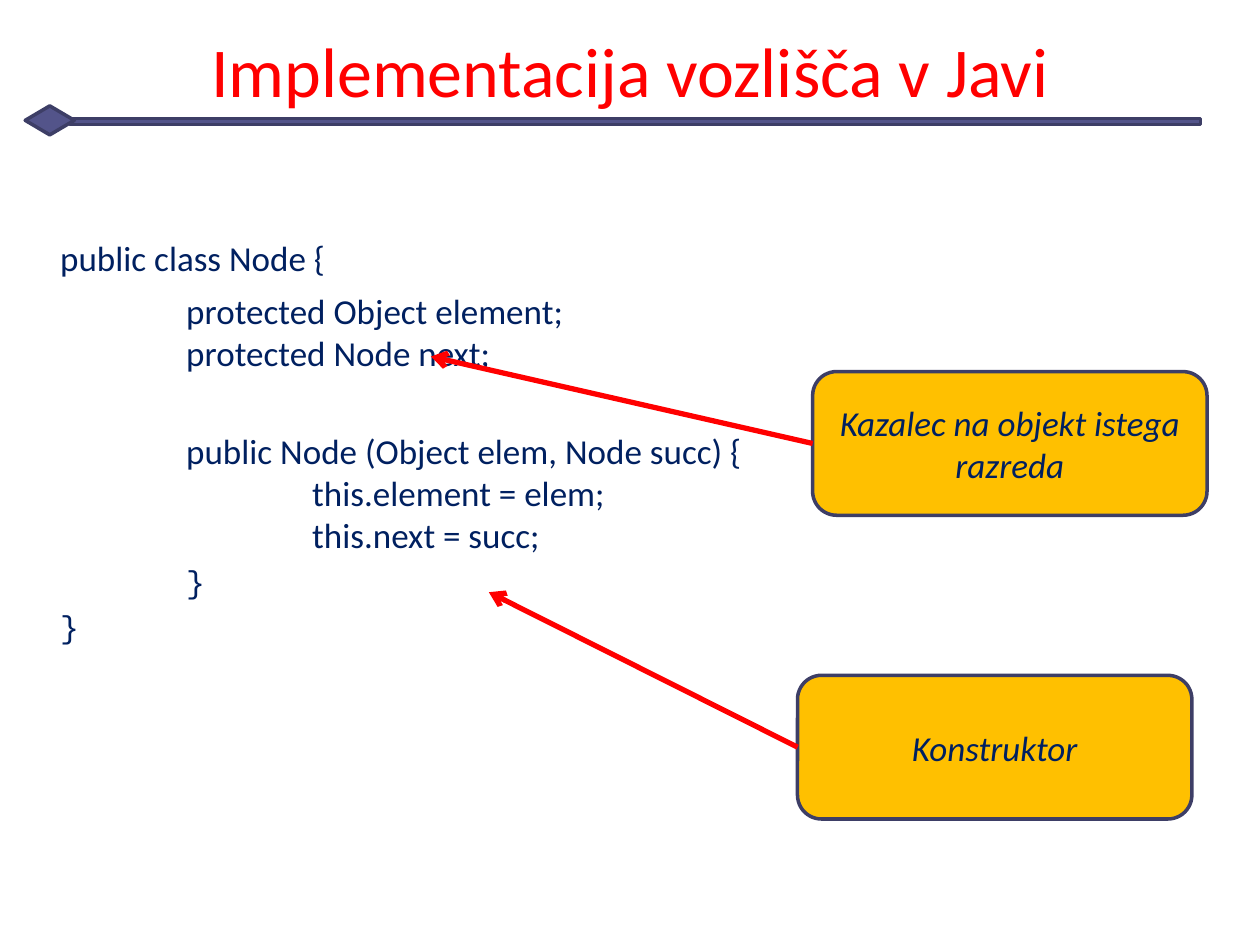
from lxml import etree
from pptx import Presentation
from pptx.dml.color import RGBColor
from pptx.enum.shapes import MSO_CONNECTOR, MSO_SHAPE
from pptx.enum.text import MSO_ANCHOR, PP_ALIGN
from pptx.oxml.ns import qn
from pptx.util import Inches, Pt

RECTANGLE = MSO_SHAPE.RECTANGLE
DIAMOND = MSO_SHAPE.FLOWCHART_DECISION
ROUNDED = MSO_SHAPE.ROUNDED_RECTANGLE
STRAIGHT = MSO_CONNECTOR.STRAIGHT
MIDDLE = MSO_ANCHOR.MIDDLE
CENTER = PP_ALIGN.CENTER

RED = RGBColor(0xFF, 0x00, 0x00)
NAVY = RGBColor(0x00, 0x20, 0x60)
VIOLET = RGBColor(0x53, 0x54, 0x8A)
DARK_VIOLET = RGBColor(0x3D, 0x3E, 0x66)
AMBER = RGBColor(0xFF, 0xC0, 0x00)

deck = Presentation()
deck.slide_width, deck.slide_height = Inches(10), Inches(7.5)
slide = deck.slides.add_slide(deck.slide_layouts[6])

# Positions are percentages of the slide's width and height
COL = deck.slide_width / 100
ROW = deck.slide_height / 100


def add_panel(kind, left, top, width, height, fill):
    panel = slide.shapes.add_shape(kind, int(left * COL), int(top * ROW),
                                   int(width * COL), int(height * ROW))
    panel.shadow.inherit = False
    panel.fill.solid()
    panel.fill.fore_color.rgb = fill
    panel.line.color.rgb = DARK_VIOLET
    panel.line.width = Pt(2)
    return panel


def add_text(paragraph, text, size, color, font="Calibri", italic=None):
    run = paragraph.add_run()
    run.text = text
    run.font.size = Pt(size)
    run.font.name = font
    run.font.color.rgb = color
    run.font.italic = italic


# Rule with a diamond under the title
add_panel(RECTANGLE, 5.5, 12.53, 89.8, 0.67, VIOLET)
add_panel(DIAMOND, 2, 11.2, 3.9, 3.07, VIOLET)

# Title
title = slide.shapes.add_textbox(int(5 * COL), int(2.13 * ROW),
                                 int(90 * COL), int(10.4 * ROW)).text_frame
title.word_wrap = True
title.vertical_anchor = MIDDLE
title.paragraphs[0].alignment = CENTER
add_text(title.paragraphs[0], "Implementacija vozlišča v Javi", 40, RED)

# Java listing: indent level, space before, code, size, font
code_lines = [
    (0, 0, "public class Node {", 20, "Calibri"),
    (1, 6, "protected Object element;", 20, "Calibri"),
    (1, 0, "protected Node next;", 20, "Calibri"),
    (1, 32, "public Node (Object elem, Node succ) {", 20, "Calibri"),
    (2, 0, "this.element = elem;", 20, "Calibri"),
    (2, 0, "this.next = succ;", 20, "Calibri"),
    (1, 4, "}", 18, "Courier New"),
    (0, 4, "}", 18, "Courier New"),
]
BASE_INDENT, LEVEL_INDENT = 3.8, 10
listing = slide.shapes.add_textbox(0, int(22.27 * ROW),
                                   int(85 * COL), int(67.73 * ROW)).text_frame
listing.word_wrap = True
listing.margin_top = int(2.8 * ROW)
for number, (level, gap, code, size, font) in enumerate(code_lines):
    line = listing.add_paragraph() if number else listing.paragraphs[0]
    indent = int((BASE_INDENT + level * LEVEL_INDENT) * COL)
    line._p.get_or_add_pPr().set("marL", str(indent))
    line.space_before = Pt(gap)
    add_text(line, code, size, NAVY, font)

# Callouts, each with an arrow from its left side to the code
CALLOUT_WIDTH, CALLOUT_HEIGHT = 31.3, 15.2
callouts = [
    ("Kazalec na objekt istega razreda", 64.5, 39.33, 34.2, 37.73),
    ("Konstruktor", 63.3, 71.47, 38.8, 62.67),
]
for label, left, top, target_x, target_y in callouts:
    callout = add_panel(ROUNDED, left, top, CALLOUT_WIDTH, CALLOUT_HEIGHT, AMBER)
    frame = callout.text_frame
    frame.word_wrap = True
    frame.vertical_anchor = MIDDLE
    frame.paragraphs[0].alignment = CENTER
    add_text(frame.paragraphs[0], label, 20, NAVY, italic=True)

    arrow = slide.shapes.add_connector(
        STRAIGHT, int(left * COL), int((top + CALLOUT_HEIGHT / 2) * ROW),
        int(target_x * COL), int(target_y * ROW))
    arrow.line.color.rgb = RED
    arrow.line.width = Pt(3)
    etree.SubElement(arrow.line._get_or_add_ln(), qn("a:tailEnd"), type="arrow")
    etree.SubElement(arrow._element.spPr, qn("a:effectLst"))

deck.save("out.pptx")
